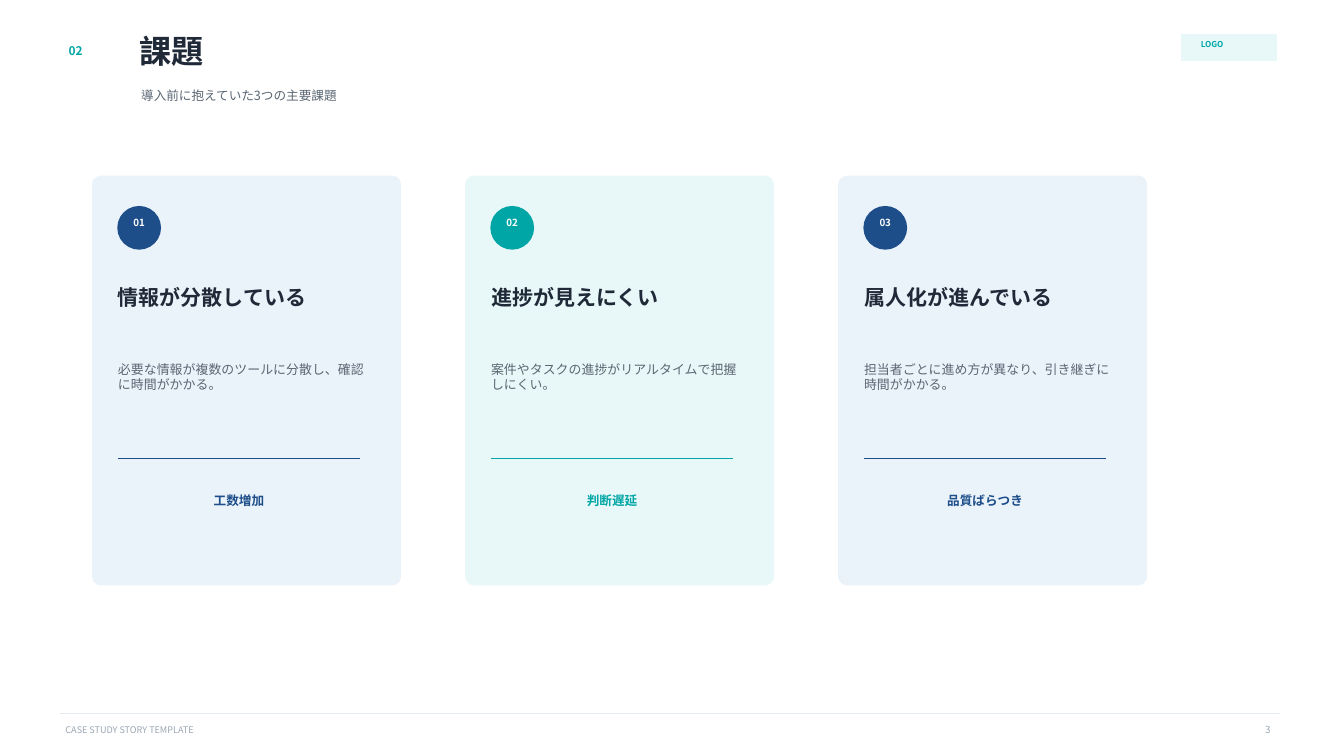
from lxml import etree
from pptx import Presentation
from pptx.dml.color import RGBColor
from pptx.enum.shapes import MSO_CONNECTOR, MSO_SHAPE
from pptx.enum.text import MSO_ANCHOR, PP_ALIGN
from pptx.oxml.ns import qn
from pptx.util import Pt

PX = 9144  # EMU in one px, 100 px to the inch
FONT = "Noto Sans CJK JP"

WHITE = RGBColor(0xFF, 0xFF, 0xFF)
INK = RGBColor(0x1F, 0x29, 0x37)
SLATE = RGBColor(0x5B, 0x67, 0x73)
MUTED = RGBColor(0x9A, 0xA6, 0xB2)
RULE = RGBColor(0xE5, 0xEA, 0xF0)
NAVY = RGBColor(0x1D, 0x4E, 0x89)
TEAL = RGBColor(0x00, 0xA6, 0xA6)
PALE_BLUE = RGBColor(0xEA, 0xF2, 0xFA)
PALE_TEAL = RGBColor(0xE8, 0xF7, 0xF7)

RECTANGLE = MSO_SHAPE.RECTANGLE
ROUNDED = MSO_SHAPE.ROUNDED_RECTANGLE
OVAL = MSO_SHAPE.OVAL
STRAIGHT = MSO_CONNECTOR.STRAIGHT
LEFT, CENTER = PP_ALIGN.LEFT, PP_ALIGN.CENTER
TOP, MIDDLE = MSO_ANCHOR.TOP, MSO_ANCHOR.MIDDLE

CARD_LEFT, CARD_PITCH, CARD_PADDING = 92, 370, 25
CARDS = [
    ("情報が分散している", "必要な情報が複数のツールに分散し、確認に時間がかかる。",
     "工数増加", NAVY, PALE_BLUE),
    ("進捗が見えにくい", "案件やタスクの進捗がリアルタイムで把握しにくい。",
     "判断遅延", TEAL, PALE_TEAL),
    ("属人化が進んでいる", "担当者ごとに進め方が異なり、引き継ぎに時間がかかる。",
     "品質ばらつき", NAVY, PALE_BLUE),
]


class SlideBuilder:
    """Draws elements on one slide, with lengths in px."""

    def __init__(self, slide, font_name):
        self.slide = slide
        self.font_name = font_name

    def shape(self, kind, left, top, width, height, color):
        shape = self.slide.shapes.add_shape(
            kind, left * PX, top * PX, width * PX, height * PX)
        shape.shadow.inherit = False
        shape.fill.solid()
        shape.fill.fore_color.rgb = color
        shape.line.color.rgb = color
        shape.line.width = Pt(1)
        return shape

    def horizontal_line(self, left, top, width, color, weight):
        line = self.slide.shapes.add_connector(
            STRAIGHT, left * PX, top * PX, (left + width) * PX, top * PX)
        line.line.color.rgb = color
        line.line.width = Pt(weight)
        etree.SubElement(line._element.spPr, qn("a:effectLst"))

    def text(self, text, left, top, width, height, size, color, bold=False,
             align=LEFT, anchor=MIDDLE, inset_x=0, inset_y=0):
        box = self.slide.shapes.add_textbox(
            left * PX, top * PX, width * PX, height * PX)
        frame = box.text_frame
        frame.word_wrap = True
        frame.vertical_anchor = anchor
        frame.margin_left = frame.margin_right = inset_x * PX
        frame.margin_top = frame.margin_bottom = inset_y * PX
        paragraph = frame.paragraphs[0]
        paragraph.text = text
        paragraph.alignment = align
        font = paragraph.font
        font.size = Pt(size)
        font.bold = bold
        font.color.rgb = color
        font.name = self.font_name
        properties = paragraph._p.get_or_add_pPr().get_or_add_defRPr()
        etree.SubElement(properties, qn("a:ea"), typeface=self.font_name)

    def card(self, number, left, title, body, effect, accent, background):
        inner = left + CARD_PADDING
        panel = self.shape(ROUNDED, left, 175, 305, 405, background)
        panel.adjustments[0] = 0.026
        self.shape(OVAL, inner, 205, 42, 42, accent)
        self.text(f"{number:02}", inner, 215, 42, 11, 7, WHITE, True, CENTER)
        self.text(title, inner, 278, 248, 34, 15, INK, True)
        self.text(body, inner, 338, 248, 72, 9.2, SLATE)
        self.horizontal_line(inner, 455, 240, accent, 1.1)
        self.text(effect, inner, 485, 240, 23, 9, accent, True, CENTER)


def main():
    presentation = Presentation()
    presentation.slide_width = 1333 * PX
    presentation.slide_height = 750 * PX
    slide = presentation.slides.add_slide(presentation.slide_layouts[6])
    builder = SlideBuilder(slide, FONT)

    builder.horizontal_line(60, 708, 1210, RULE, 0.8)
    builder.text("CASE STUDY STORY TEMPLATE", 65, 716, 400, 16, 6.5, MUTED)

    builder.text("02", 68, 36, 32, 28, 8.5, TEAL, True)
    builder.text("課題", 138, 28, 745, 45, 23, INK, True)
    builder.text("導入前に抱えていた3つの主要課題", 140, 80, 745, 30, 9, SLATE)
    builder.shape(RECTANGLE, 1172, 34, 94, 26, PALE_TEAL)
    builder.text("LOGO", 1191, 38, 58, 12, 5.8, TEAL, True)

    for index, card in enumerate(CARDS):
        builder.card(index + 1, CARD_LEFT + index * CARD_PITCH, *card)

    builder.text("3", 1245, 713, 87, 33, 7, MUTED,
                 anchor=TOP, inset_x=10, inset_y=5)
    presentation.save("out.pptx")


if __name__ == "__main__":
    main()
